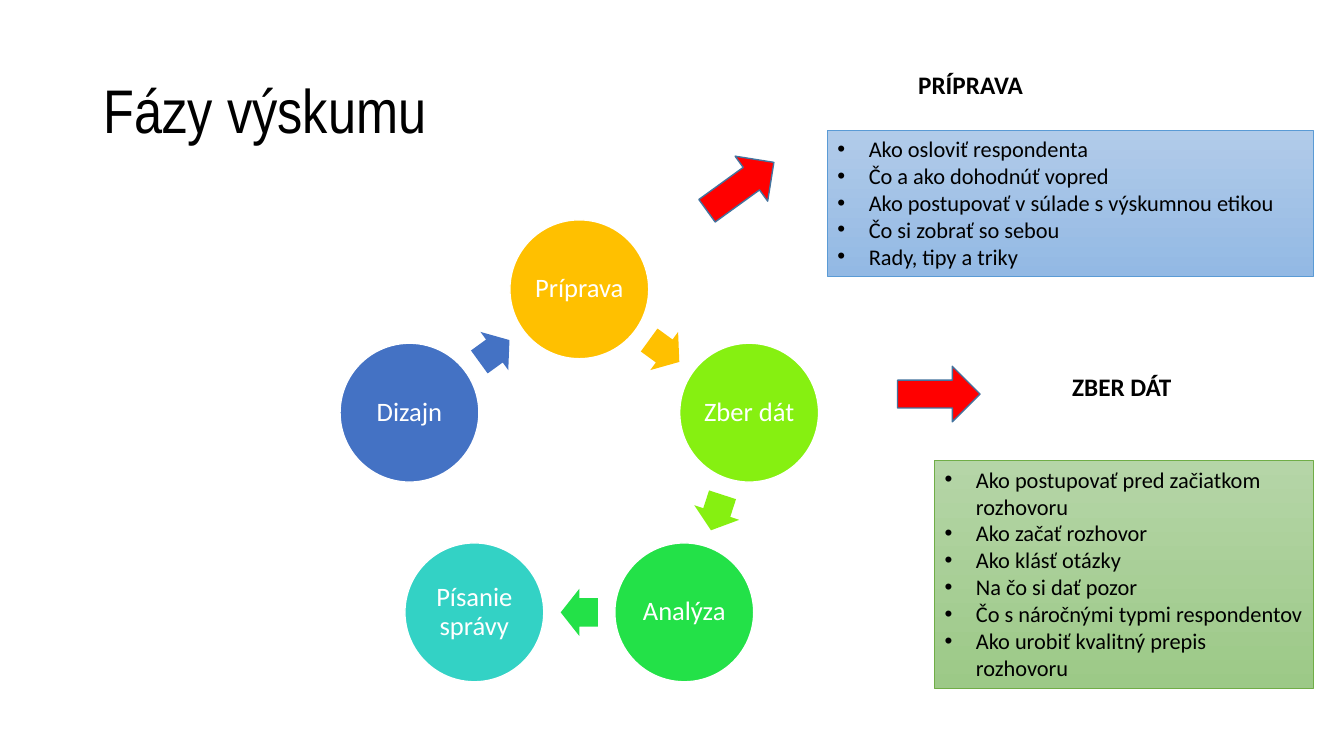
import math
from dataclasses import dataclass

from pptx import Presentation
from pptx import util as u
from pptx.dml import color as col
from pptx.enum import shapes, text

HUES = {
    "black": "000000", "white": "FFFFFF", "red": "FF0000", "edge": "43739E",
    "gold": "FFC000", "lime": "86F011", "green": "23E148", "teal": "33D2C5",
    "blue": "4472C4", "sky": "B1CBE9", "sea": "93B9E4", "rim": "5B9BD5",
    "mint": "B5D5A7", "moss": "9CC987", "leaf": "70AD47",
}


@dataclass
class Phase:
    name: str
    hue: str
    arrow: bool = True


@dataclass
class Box:
    x: float
    y: float
    w: float
    h: float


@dataclass
class Topic:
    name: str
    head: Box
    pointer: Box
    turn: float
    panel: Box
    top: str
    base: str
    rim: str
    items: list[str]


PHASES = [
    Phase("Príprava", "gold"),
    Phase("Zber dát", "lime"),
    Phase("Analýza", "green"),
    Phase("Písanie správy", "teal", False),
    Phase("Dizajn", "blue"),
]

TOPICS = [
    Topic("PRÍPRAVA", Box(22.89, 1.63, 7.77, 1.02),
          Box(17.96, 3.66, 1.4, 2.08), 234.1,
          Box(20.85, 3.28, 12.24, 3.68), "sky", "sea", "rim",
          ["Ako osloviť respondenta",
           "Čo a ako dohodnúť vopred",
           "Ako postupovať v súlade s výskumnou etikou",
           "Čo si zobrať so sebou",
           "Rady, tipy a triky"]),
    Topic("ZBER DÁT", Box(26.77, 9.22, 7.77, 1.02),
          Box(22.96, 8.89, 1.4, 2.08), 270,
          Box(23.55, 11.61, 9.55, 5.74), "mint", "moss", "leaf",
          ["Ako postupovať pred začiatkom rozhovoru",
           "Ako začať rozhovor",
           "Ako klásť otázky",
           "Na čo si dať pozor",
           "Čo s náročnými typmi respondentov",
           "Ako urobiť kvalitný prepis rozhovoru"]),
]

MID_X, MID_Y, RADIUS, DISC = 14.6, 11.79, 4.5, 3.5
STEP = 360 / len(PHASES)


def rgb(hue: str) -> col.RGBColor:
    return col.RGBColor.from_string(HUES[hue])


def area(box: Box) -> tuple:
    return u.Cm(box.x), u.Cm(box.y), u.Cm(box.w), u.Cm(box.h)


def place(item, box: Box) -> None:
    item.left, item.top, item.width, item.height = area(box)


def style(frame, size: float, hue: str = "black", face: str = "Calibri",
          bold: bool = False) -> None:
    for para in frame.paragraphs:
        for run in para.runs:
            run.font.size = u.Pt(size)
            run.font.name = face
            run.font.bold = bold
            run.font.color.rgb = rgb(hue)


def shape(slide, kind, box: Box, hue: str, rim: str | None = None):
    item = slide.shapes.add_shape(kind, *area(box))
    item.shadow.inherit = False
    item.fill.solid()
    item.fill.fore_color.rgb = rgb(hue)
    if rim:
        item.line.color.rgb = rgb(rim)
        item.line.width = u.Pt(1)
    else:
        item.line.fill.background()
    return item


def spot(turn: float, reach: float, w: float, h: float) -> Box:
    angle = math.radians(turn)
    x = MID_X + reach * math.sin(angle)
    y = MID_Y - reach * math.cos(angle)
    return Box(x - w / 2, y - h / 2, w, h)


def draw_phase(slide, phase: Phase, turn: float) -> None:
    disc = shape(slide, shapes.MSO_SHAPE.OVAL,
                 spot(turn, RADIUS, DISC, DISC), phase.hue, "white")
    frame = disc.text_frame
    frame.text = phase.name
    frame.word_wrap = True
    frame.vertical_anchor = text.MSO_ANCHOR.MIDDLE
    frame.margin_left = frame.margin_right = u.Cm(0.05)
    frame.margin_top = frame.margin_bottom = u.Cm(0.05)
    frame.paragraphs[0].alignment = text.PP_ALIGN.CENTER
    frame.paragraphs[0].line_spacing = 0.9
    style(frame, 19, "white")
    if phase.arrow:
        half = STEP / 2
        reach = RADIUS * math.cos(math.radians(half))
        arrow = shape(slide, shapes.MSO_SHAPE.RIGHT_ARROW,
                      spot(turn + half, reach, 0.94, 1.19), phase.hue)
        arrow.adjustments[0] = 0.6
        arrow.adjustments[1] = 0.5
        arrow.rotation = (turn + half) % 360


def draw_topic(slide, topic: Topic, body) -> None:
    head = slide.shapes.add_textbox(*area(topic.head)).text_frame
    head.word_wrap = True
    head.text = topic.name
    style(head, 18, bold=True)
    arrow = shape(slide, shapes.MSO_SHAPE.DOWN_ARROW, topic.pointer,
                  "red", "edge")
    arrow.rotation = topic.turn
    place(body, topic.panel)
    body.fill.gradient()
    body.fill.gradient_angle = 270
    for stop, hue in zip(body.fill.gradient_stops, (topic.top, topic.base)):
        stop.color.rgb = rgb(hue)
    body.line.color.rgb = rgb(topic.rim)
    body.line.width = u.Pt(0.5)
    frame = body.text_frame
    frame.text = "\n".join(topic.items)
    frame.auto_size = text.MSO_AUTO_SIZE.NONE
    for para in frame.paragraphs:
        para.space_before = u.Pt(0)
        props = para._p.get_or_add_pPr()
        props.set("marL", str(u.Cm(0.79)))
        props.set("indent", str(-u.Cm(0.79)))
    style(frame, 16)


def main() -> None:
    deck = Presentation()
    deck.slide_width, deck.slide_height = u.Cm(33.87), u.Cm(19.05)
    slide = deck.slides.add_slide(deck.slide_layouts[3])
    title, *bodies = list(slide.placeholders)[:3]
    place(title, Box(2.36, 1.02, 29.21, 3.68))
    frame = title.text_frame
    frame.text = "Fázy výskumu"
    frame.vertical_anchor = text.MSO_ANCHOR.MIDDLE
    frame.paragraphs[0].alignment = text.PP_ALIGN.LEFT
    frame.paragraphs[0].line_spacing = 0.9
    style(frame, 44, face="Arial Narrow")
    for rank, phase in enumerate(PHASES):
        draw_phase(slide, phase, rank * STEP)
    for topic, body in zip(TOPICS, bodies):
        draw_topic(slide, topic, body)
    deck.save("out.pptx")


if __name__ == "__main__":
    main()
